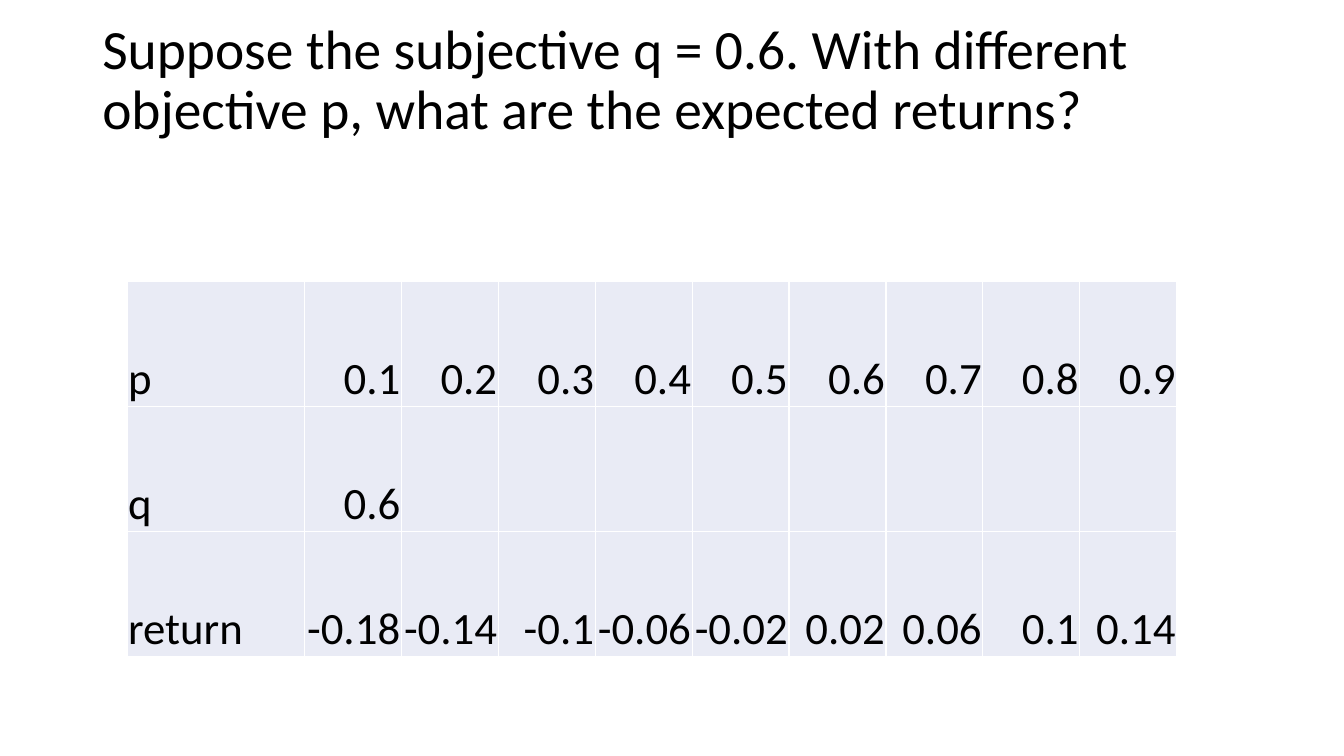
from pptx import Presentation
from pptx.dml.color import RGBColor
from pptx.enum.text import MSO_ANCHOR, PP_ALIGN
from pptx.oxml import parse_xml
from pptx.oxml.ns import nsdecls
from pptx.util import Pt

SCALE = 9525  # EMU in one px, 96 px to the inch
BLACK = RGBColor(0x00, 0x00, 0x00)
WHITE = RGBColor(0xFF, 0xFF, 0xFF)
PALE = RGBColor(0xE9, 0xEB, 0xF5)
FONT = "Calibri"

TITLE = ("Suppose the subjective q = 0.6. With different objective p, "
         "what are the expected returns?")
ROWS = [
    ["p", "0.1", "0.2", "0.3", "0.4", "0.5", "0.6", "0.7", "0.8", "0.9"],
    ["q", "0.6"] + [""] * 8,
    ["return", "-0.18", "-0.14", "-0.1", "-0.06", "-0.02",
     "0.02", "0.06", "0.1", "0.14"],
]


def px(count):
    return round(count * SCALE)


def put_text(frame, text, size=32, color=BLACK, align=PP_ALIGN.LEFT, line=1.0):
    para = frame.paragraphs[0]
    para.alignment = align
    para.line_spacing = line
    run = para.add_run()
    run.text = text
    run.font.name = FONT
    run.font.size = Pt(size)
    run.font.color.rgb = color


def add_title(slide, left, top, width, height):
    box = slide.shapes.add_textbox(px(left), px(top), px(width), px(height))
    frame = box.text_frame
    frame.word_wrap = True
    frame.vertical_anchor = MSO_ANCHOR.MIDDLE
    frame.margin_bottom = px(64)  # lifts the two lines
    put_text(frame, TITLE, size=39.6, line=0.9)


def set_edges(cell, color=WHITE, width=1):
    """Draw all four borders; they must precede the fill in the XML."""
    props = cell._tc.get_or_add_tcPr()
    for spot, side in enumerate("LRTB"):
        props.insert(spot, parse_xml(
            f'<a:ln{side} {nsdecls("a")} w="{Pt(width)}"><a:solidFill>'
            f'<a:srgbClr val="{color}"/></a:solidFill></a:ln{side}>'))


def style_cell(cell):
    cell.fill.solid()
    cell.fill.fore_color.rgb = PALE
    cell.vertical_anchor = MSO_ANCHOR.BOTTOM
    cell.margin_left = cell.margin_right = cell.margin_top = px(1)
    cell.margin_bottom = 0
    set_edges(cell)


def add_grid(slide, left, top, width, first, height):
    """Add the table: a first column of its own width, the rest equal."""
    count = len(ROWS[0])
    frame = slide.shapes.add_table(len(ROWS), count, px(left), px(top),
                                   px(width), px(height * len(ROWS)))
    table = frame.table
    table.first_row = table.horz_banding = False
    for col, column in enumerate(table.columns):
        column.width = px((width - first) / (count - 1) if col else first)
    for row, texts in zip(table.rows, ROWS):
        row.height = px(height)
        for col, (cell, text) in enumerate(zip(row.cells, texts)):
            style_cell(cell)
            if text:
                align = PP_ALIGN.RIGHT if col else PP_ALIGN.LEFT
                put_text(cell.text_frame, text, align=align)


def main():
    deck = Presentation()
    deck.slide_width, deck.slide_height = px(1280), px(720)
    slide = deck.slides.add_slide(deck.slide_layouts[6])
    add_title(slide, 88, 38, 1104, 139)
    add_grid(slide, 121, 268, width=1000, first=169, height=119)
    deck.save("out.pptx")


if __name__ == "__main__":
    main()
